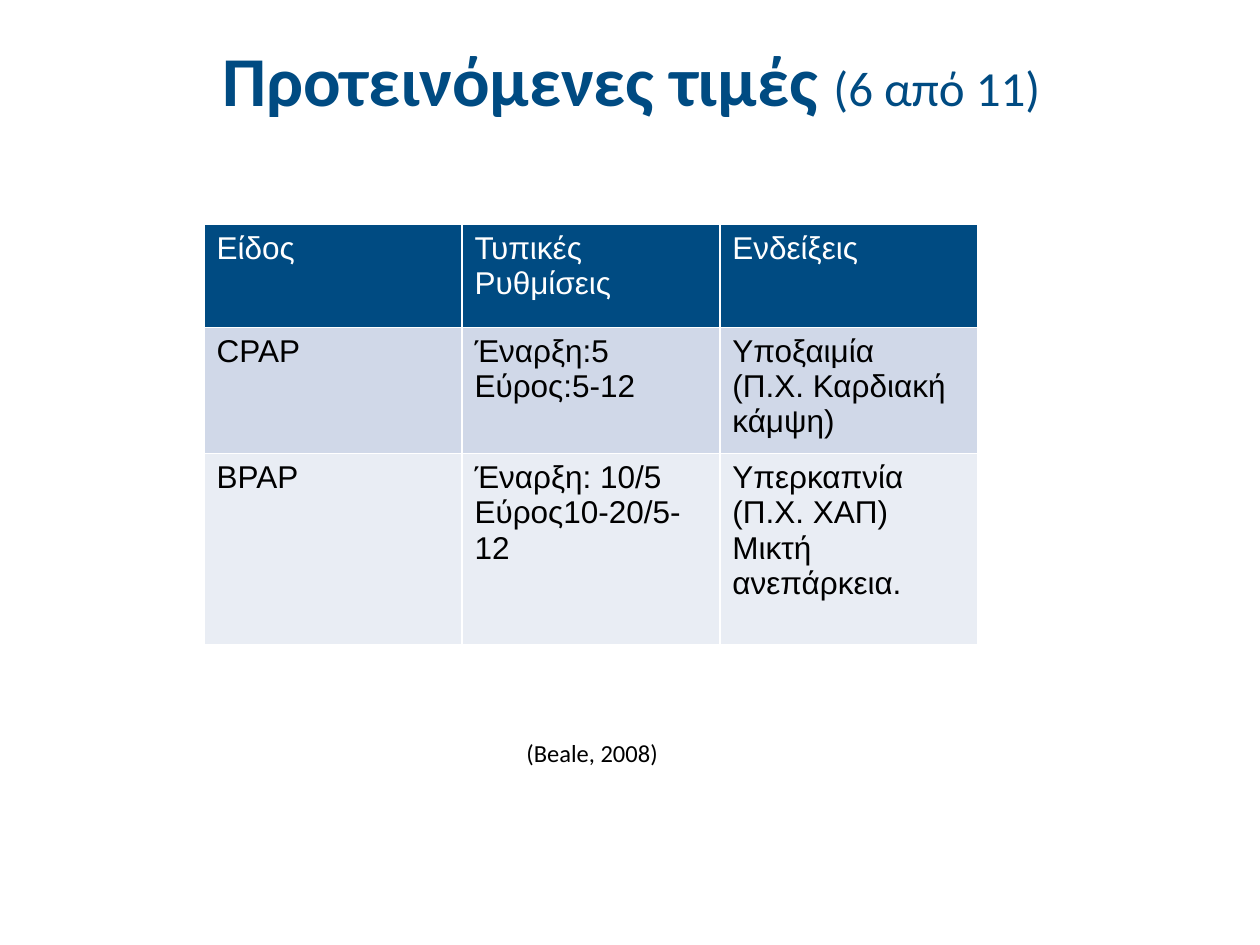
import pptx
import pptx.dml.color
import pptx.enum.text
import pptx.util
from pptx.util import Inches

NAVY = "004B82"
BLACK = "000000"
WHITE = "FFFFFF"
ROW_FILLS = [NAVY, "D0D8E8", "E9EDF4"]
ROW_HEIGHTS = [0.82, 0.82, 1.52]
SETTINGS = [
    ["Είδος", "Τυπικές Ρυθμίσεις", "Ενδείξεις"],
    ["CPAP", "Έναρξη:5\nΕύρος:5-12", "Υποξαιμία\n(Π.Χ. Καρδιακή κάμψη)"],
    ["BPAP", "Έναρξη: 10/5\nΕύρος10-20/5-12", "Υπερκαπνία\n(Π.Χ. ΧΑΠ)\nΜικτή ανεπάρκεια."],
]


def rgb(value):
    return pptx.dml.color.RGBColor.from_string(value)


def style(font, name, size, color, bold=False):
    font.name = name
    font.size = pptx.util.Pt(size)
    font.color.rgb = rgb(color)
    font.bold = bold


def add_centered_line(slide, left, top, width, height):
    frame = slide.shapes.add_textbox(left, top, width, height).text_frame
    frame.word_wrap = True
    frame.vertical_anchor = pptx.enum.text.MSO_ANCHOR.MIDDLE
    line = frame.paragraphs[0]
    line.alignment = pptx.enum.text.PP_ALIGN.CENTER
    return line


def add_title(slide, left, top, width, height):
    title = add_centered_line(slide, left, top, width, height)
    for words, size, bold in [("Προτεινόμενες τιμές ", 40, True), ("(6 από 11)", 28, False)]:
        part = title.add_run()
        part.text = words
        style(part.font, "Calibri", size, NAVY, bold)


def add_settings_table(slide, left, top, width, height):
    settings = slide.shapes.add_table(
        len(SETTINGS), len(SETTINGS[0]), left, top, width, height
    ).table
    for row, row_height in zip(settings.rows, ROW_HEIGHTS):
        row.height = Inches(row_height)
    for r, (entries, fill) in enumerate(zip(SETTINGS, ROW_FILLS)):
        for c, entry in enumerate(entries):
            cell = settings.cell(r, c)
            cell.fill.solid()
            cell.fill.fore_color.rgb = rgb(fill)
            cell.text = entry
            for paragraph in cell.text_frame.paragraphs:
                style(paragraph.font, "Arial", 18, WHITE if r == 0 else BLACK)


def add_citation(slide, left, top, width, height):
    citation = add_centered_line(slide, left, top, width, height)
    citation.text = "(Beale, 2008)"
    style(citation.font, "Calibri", 14, BLACK)


def main():
    deck = pptx.Presentation()
    deck.slide_width = Inches(10)
    deck.slide_height = Inches(7.5)
    slide = deck.slides.add_slide(deck.slide_layouts[6])
    add_citation(slide, Inches(0.92), Inches(5.8), Inches(7.56), Inches(0.34))
    add_settings_table(slide, Inches(1.62), Inches(1.78), Inches(6.14), Inches(sum(ROW_HEIGHTS)))
    add_title(slide, Inches(0.51), Inches(0.13), Inches(9), Inches(0.99))
    deck.save("out.pptx")


if __name__ == "__main__":
    main()
